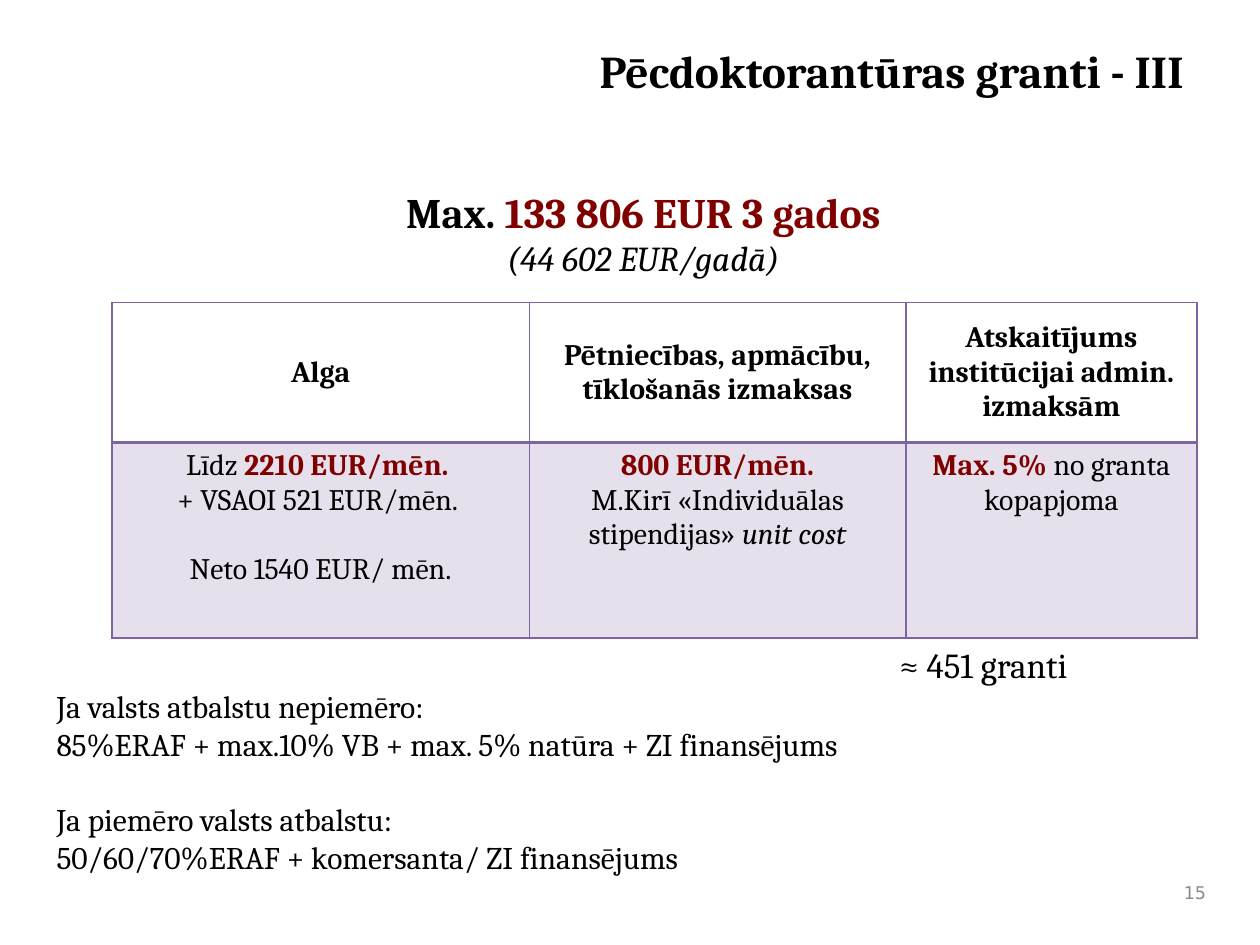
from dataclasses import dataclass

from lxml.etree import SubElement
from pptx import Presentation
from pptx.dml.color import RGBColor
from pptx.enum.text import MSO_ANCHOR, MSO_AUTO_SIZE, PP_ALIGN
from pptx.oxml.ns import qn
from pptx.util import Cm, Pt


@dataclass(frozen=True)
class Theme:
    """Colours, fonts and type sizes of the slide."""
    ink: str = "000000"
    accent: str = "800000"
    purple: str = "8064A2"
    muted: str = "898989"
    font: str = "Cambria"
    number_font: str = "DejaVu Sans"
    title: int = 26
    amount: int = 24
    subtitle: int = 20
    body: int = 18
    cell: int = 17
    number: int = 10
    tint: int = 20
    thin: int = 1
    thick: int = 2


@dataclass(frozen=True)
class Run:
    """A piece of text with its own look."""
    text: str
    size: int
    color: str = Theme.ink
    bold: bool = False
    italic: bool = False
    font: str = Theme.font


@dataclass(frozen=True)
class Line:
    """A paragraph made of runs, with optional space before in points."""
    runs: tuple
    gap: float = 0


def line(*runs, gap=0):
    """Collect runs into a line."""
    return Line(runs, gap)


class GrantSlide:
    """Holds the theme and the current slide and adds elements to it."""

    def __init__(self, deck, theme):
        """Start a title-only slide."""
        self.theme = theme
        self.slide = deck.slides.add_slide(deck.slide_layouts[5])

    def add_lines(self, frame, lines, align):
        """Fill a text frame run by run."""
        for index, content in enumerate(lines):
            paragraph = frame.add_paragraph() if index else frame.paragraphs[0]
            paragraph.alignment = align
            paragraph.space_before = Pt(content.gap)
            for part in content.runs:
                run = paragraph.add_run()
                run.text = part.text
                run.font.name = part.font
                run.font.size = Pt(part.size)
                run.font.bold = part.bold
                run.font.italic = part.italic
                run.font.color.rgb = RGBColor.from_string(part.color)

    def title(self, box, heading):
        """Place and format the title placeholder."""
        holder = self.slide.shapes.title
        holder.left, holder.top, holder.width, holder.height = map(Cm, box)
        holder.text_frame.auto_size = MSO_AUTO_SIZE.NONE
        holder.text_frame.vertical_anchor = MSO_ANCHOR.TOP
        self.add_lines(holder.text_frame, [line(Run(heading, self.theme.title, bold=True))], PP_ALIGN.RIGHT)

    def text(self, box, lines, align=PP_ALIGN.LEFT, anchor=MSO_ANCHOR.TOP):
        """Add a wrapping text box."""
        frame = self.slide.shapes.add_textbox(*map(Cm, box)).text_frame
        frame.word_wrap = True
        frame.vertical_anchor = anchor
        self.add_lines(frame, lines, align)

    def border(self, cell, side, width):
        """Draw one side of a cell."""
        edge = SubElement(cell._tc.get_or_add_tcPr(), qn(f"a:ln{side}"), w=str(Pt(width)))
        SubElement(SubElement(edge, qn("a:solidFill")), qn("a:srgbClr"), val=self.theme.purple)

    def tint(self, cell):
        """Give a cell a translucent fill."""
        cell.fill.solid()
        cell.fill.fore_color.rgb = RGBColor.from_string(self.theme.purple)
        color = cell._tc.tcPr.find(qn("a:solidFill")).find(qn("a:srgbClr"))
        SubElement(color, qn("a:alpha"), val=str(self.theme.tint * 1000))

    def table(self, left, top, widths, heights, rows):
        """Add a table with a plain header row and tinted body rows."""
        grid = self.slide.shapes.add_table(
            len(heights), len(widths), Cm(left), Cm(top), Cm(sum(widths)), Cm(sum(heights))).table
        grid.horz_banding = False
        for column, width in zip(grid.columns, widths):
            column.width = Cm(width)
        for index, (row, height, contents) in enumerate(zip(grid.rows, heights, rows)):
            row.height = Cm(height)
            header = index == 0
            for cell, lines in zip(row.cells, contents):
                thick_side = "B" if header else "T"
                for side in "LRTB":
                    self.border(cell, side, self.theme.thick if side == thick_side else self.theme.thin)
                if header:
                    cell.fill.background()
                else:
                    self.tint(cell)
                cell.vertical_anchor = MSO_ANCHOR.MIDDLE if header else MSO_ANCHOR.TOP
                self.add_lines(cell.text_frame, lines, PP_ALIGN.CENTER)


def main():
    """Build the slide and save it."""
    theme = Theme()
    deck = Presentation()
    deck.slide_width, deck.slide_height = Cm(25.4), Cm(19.05)
    grants = GrantSlide(deck, theme)

    def plain(text, italic=False):
        """Make a regular table run."""
        return Run(text, theme.cell, italic=italic)

    def strong(text, color=theme.accent):
        """Make a bold table run."""
        return Run(text, theme.cell, color, bold=True)

    grants.title((4.78, 0.74, 19.35, 2.87), "Pēcdoktorantūras granti - III")

    headings = ["Alga", "Pētniecības, apmācību, tīklošanās izmaksas",
                "Atskaitījums institūcijai admin. izmaksām"]
    salary = [line(plain("Līdz "), strong("2210 EUR/mēn. ")),
              line(plain("+ VSAOI 521 EUR/mēn. ")),
              line(plain("Neto 1540 EUR/ mēn."), gap=19.7)]
    research = [line(strong("800 EUR/mēn.")),
                line(plain("M.Kirī «Individuālas stipendijas» "), plain("unit cost", italic=True))]
    overhead = [line(strong("Max. 5% "), plain("no granta kopapjoma"))]
    grants.table(2.26, 6.1, (8.41, 7.59, 5.87), (2.82, 3.94),
                 [[[line(strong(heading, theme.ink))] for heading in headings],
                  [salary, research, overhead]])

    grants.text((23.44, 17.58, 1.12, 0.84),
                [line(Run("15", theme.number, theme.muted, font=theme.number_font))],
                PP_ALIGN.RIGHT, MSO_ANCHOR.MIDDLE)
    grants.text((15.42, 12.85, 8.81, 1.12),
                [line(Run("≈ 451 granti", theme.subtitle))], PP_ALIGN.CENTER)
    grants.text((7.24, 3.63, 11.46, 2.13),
                [line(Run("Max. ", theme.amount, bold=True),
                      Run("133 806 EUR 3 gados", theme.amount, theme.accent, bold=True)),
                 line(Run("(44 602 EUR/gadā)", theme.subtitle, italic=True))],
                PP_ALIGN.CENTER)

    funding = [("Ja valsts atbalstu nepiemēro:", 0),
               ("85%ERAF + max.10% VB + max. 5% natūra + ZI finansējums", 0),
               ("Ja piemēro valsts atbalstu:", 21.5),
               ("50/60/70%ERAF + komersanta/ ZI finansējums", 0)]
    grants.text((0.89, 13.72, 17.35, 4.11),
                [line(Run(text, theme.body), gap=gap) for text, gap in funding])

    deck.save("out.pptx")


if __name__ == "__main__":
    main()
